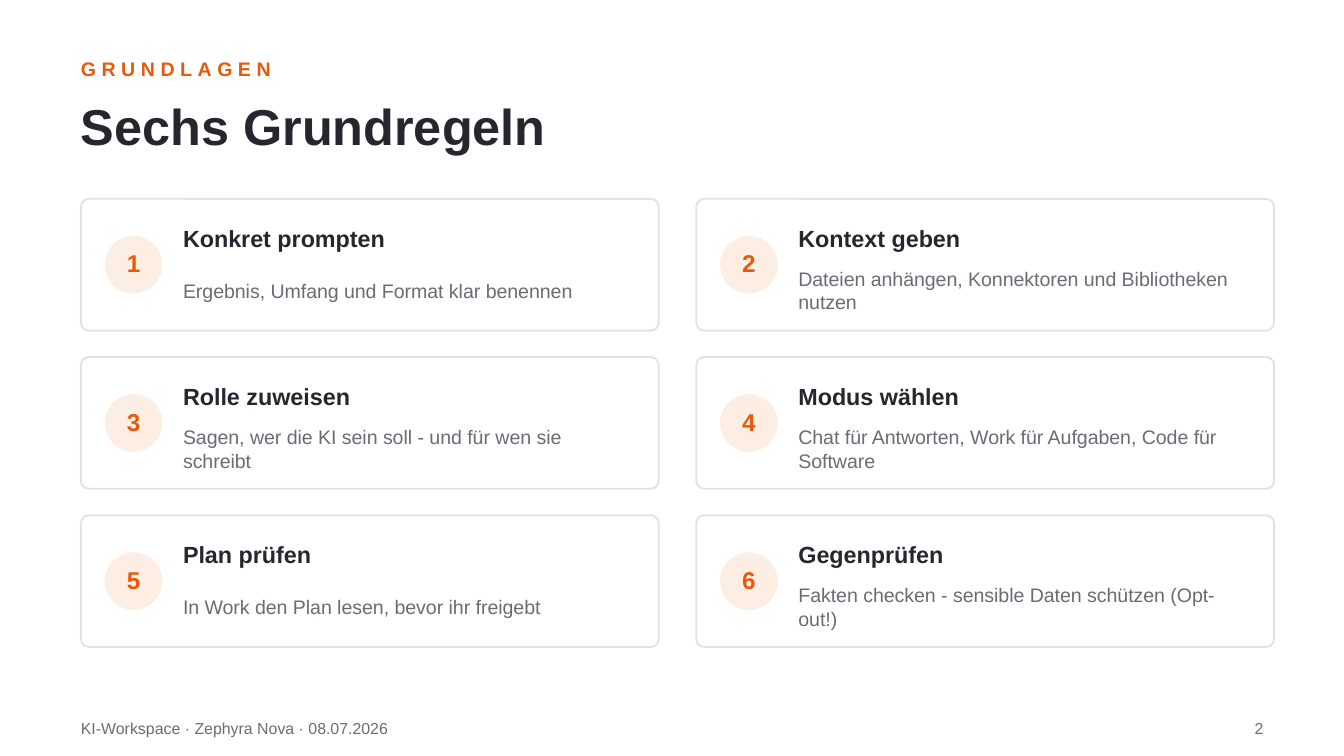
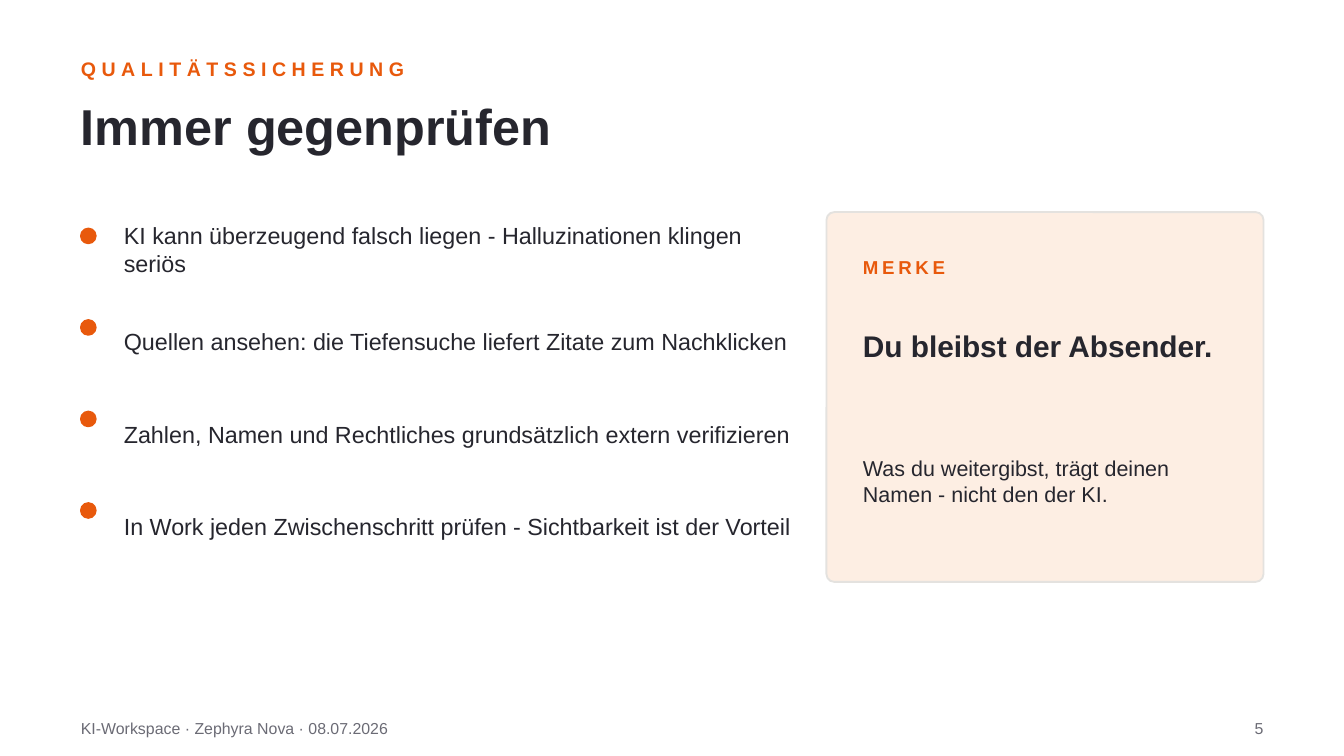
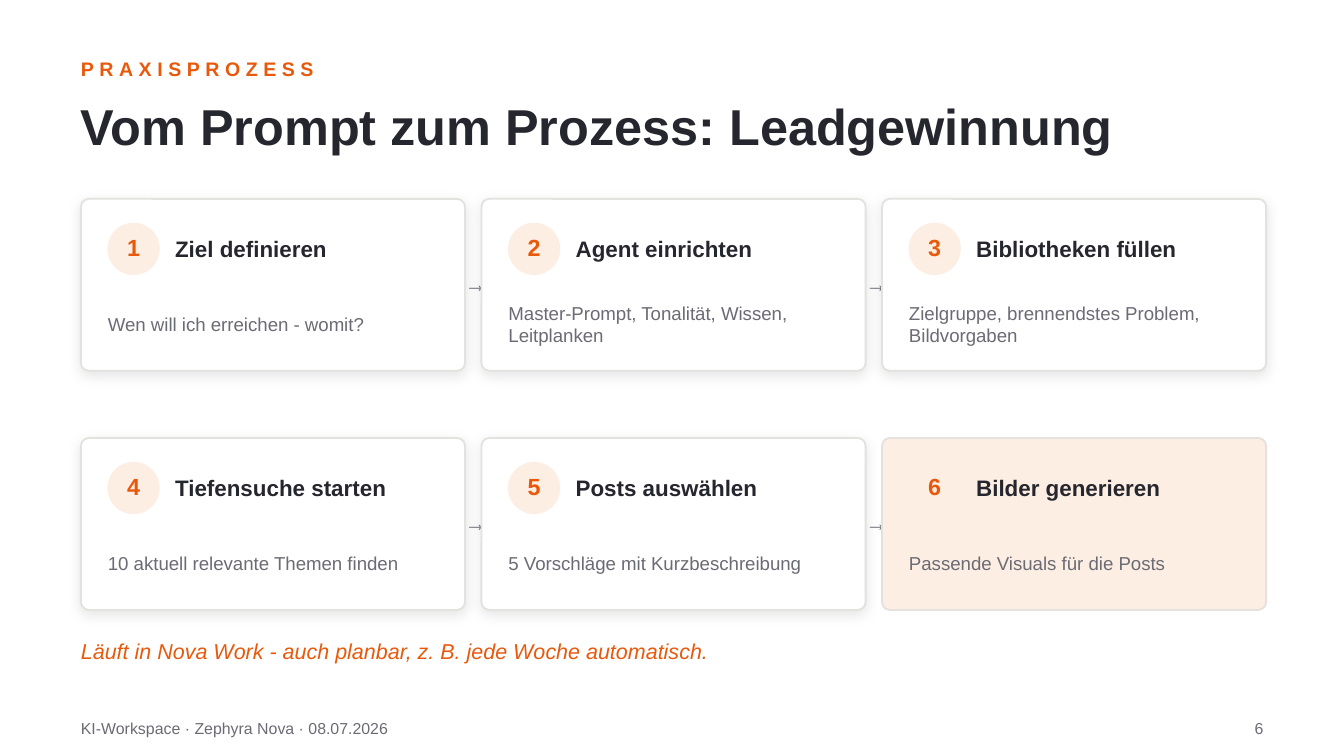
from lxml.etree import SubElement
from pptx import Presentation
from pptx.dml.color import RGBColor
from pptx.enum.shapes import MSO_SHAPE
from pptx.enum.text import MSO_ANCHOR, MSO_AUTO_SIZE, PP_ALIGN
from pptx.oxml.ns import qn
from pptx.util import Cm, Pt

FONT = "Arial"
ORANGE = "E8590C"
PEACH = "FDEEE3"
INK = "26262E"
GREY = "6B6B75"
BORDER = "E4E2DF"
WHITE = "FFFFFF"

MARGIN = 1.53
CONTENT_WIDTH = 22.35
GRID_TOP = 3.76
CORNER_RADIUS = 0.15
FOOTER = "KI-Workspace · Zephyra Nova · 08.07.2026"

RULES = [
    ("Konkret prompten", "Ergebnis, Umfang und Format klar benennen"),
    ("Kontext geben", "Dateien anhängen, Konnektoren und Bibliotheken nutzen"),
    ("Rolle zuweisen", "Sagen, wer die KI sein soll - und für wen sie schreibt"),
    ("Modus wählen", "Chat für Antworten, Work für Aufgaben, Code für Software"),
    ("Plan prüfen", "In Work den Plan lesen, bevor ihr freigebt"),
    ("Gegenprüfen", "Fakten checken - sensible Daten schützen (Opt-out!)"),
]
CHECKS = [
    ("KI kann überzeugend falsch liegen - Halluzinationen klingen seriös", 0),
    ("Quellen ansehen: die Tiefensuche liefert Zitate zum Nachklicken", 26.7),
    ("Zahlen, Namen und Rechtliches grundsätzlich extern verifizieren", 34.6),
    ("In Work jeden Zwischenschritt prüfen - Sichtbarkeit ist der Vorteil", 34.6),
]
STEPS = [
    ("Ziel definieren", "Wen will ich erreichen - womit?"),
    ("Agent einrichten", "Master-Prompt, Tonalität, Wissen, Leitplanken"),
    ("Bibliotheken füllen", "Zielgruppe, brennendstes Problem, Bildvorgaben"),
    ("Tiefensuche starten", "10 aktuell relevante Themen finden"),
    ("Posts auswählen", "5 Vorschläge mit Kurzbeschreibung"),
    ("Bilder generieren", "Passende Visuals für die Posts"),
]


def color(value):
    return RGBColor.from_string(value)


def place(box, left, top, width, height):
    box.left, box.top, box.width, box.height = Cm(left), Cm(top), Cm(width), Cm(height)


def prepare_frame(frame, anchor=MSO_ANCHOR.MIDDLE):
    frame.word_wrap = True
    frame.auto_size = MSO_AUTO_SIZE.NONE
    frame.vertical_anchor = anchor
    frame.margin_left = frame.margin_right = frame.margin_top = frame.margin_bottom = 0


def write(para, text, size=10.5, fill=INK, bold=False, italic=False,
          align=PP_ALIGN.LEFT, spacing=0, before=0):
    para.alignment = align
    para.space_before = Pt(before)
    span = para.add_run()
    span.text = text
    font = span.font
    font.name, font.size, font.bold, font.italic = FONT, Pt(size), bold, italic
    font.color.rgb = color(fill)
    if spacing:
        span._r.get_or_add_rPr().set("spc", str(spacing * 100))


def add_text(page, text, left, top, width, height, **style):
    box = page.shapes.add_textbox(Cm(left), Cm(top), Cm(width), Cm(height))
    prepare_frame(box.text_frame)
    write(box.text_frame.paragraphs[0], text, **style)


def add_figure(page, kind, left, top, width, height, fill, line, line_width):
    figure = page.shapes.add_shape(kind, Cm(left), Cm(top), Cm(width), Cm(height))
    figure.shadow.inherit = False
    figure.fill.solid()
    figure.fill.fore_color.rgb = color(fill)
    figure.line.color.rgb = color(line)
    figure.line.width = Pt(line_width)
    return figure


def add_card(page, left, top, width, height, fill=WHITE, shadow=False):
    card = add_figure(page, MSO_SHAPE.ROUNDED_RECTANGLE, left, top, width, height, fill, BORDER, 1)
    card.adjustments[0] = CORNER_RADIUS / height
    if shadow:
        effects = card._element.spPr.find(qn("a:effectLst"))
        outer = SubElement(effects, qn("a:outerShdw"), blurRad=str(Pt(7)), dist=str(Pt(2)),
                           dir="5400000", algn="bl", rotWithShape="0")
        shade = SubElement(outer, qn("a:srgbClr"), val="000000")
        SubElement(shade, qn("a:alpha"), val="10000")


def add_badge(page, number, left, top, diameter, size):
    badge = add_figure(page, MSO_SHAPE.OVAL, left, top, diameter, diameter, PEACH, PEACH, 0.5)
    prepare_frame(badge.text_frame)
    badge.text_frame.margin_bottom = Cm(0.06)
    write(badge.text_frame.paragraphs[0], str(number), size=size, fill=ORANGE, bold=True,
          align=PP_ALIGN.CENTER)


def remove_bullet(para):
    properties = para._p.get_or_add_pPr()
    properties.set("marL", "0")
    properties.set("indent", "0")
    SubElement(properties, qn("a:buNone"))


def add_checks(page):
    body = page.placeholders[1]
    place(body, 2.34, 4.19, 12.95, 6.5)
    frame = body.text_frame
    prepare_frame(frame, MSO_ANCHOR.TOP)
    for index, (text, before) in enumerate(CHECKS):
        para = frame.add_paragraph() if index else frame.paragraphs[0]
        remove_bullet(para)
        write(para, text, size=12.5, before=before)
        add_figure(page, MSO_SHAPE.OVAL, MARGIN, 4.32 + index * 1.73, 0.28, 0.28,
                   ORANGE, ORANGE, 1)


def add_page(deck, layout, kicker, title, number):
    page = deck.slides.add_slide(deck.slide_layouts.get_by_name(layout))
    heading = page.shapes.title
    place(heading, MARGIN, 1.59, CONTENT_WIDTH, 1.57)
    prepare_frame(heading.text_frame)
    write(heading.text_frame.paragraphs[0], title, size=27, bold=True)
    add_text(page, kicker, MARGIN, 0.97, CONTENT_WIDTH, 0.66, fill=ORANGE, bold=True, spacing=3)
    add_text(page, FOOTER, MARGIN, 13.46, 15.24, 0.61, size=8.5, fill=GREY)
    add_text(page, str(number), 22.35, 13.46, 1.53, 0.61, size=8.5, fill=GREY,
             align=PP_ALIGN.RIGHT)
    return page


def add_rules(page):
    for index, (name, detail) in enumerate(RULES):
        row, column = divmod(index, 2)
        left, top = MARGIN + column * 11.63, GRID_TOP + row * 2.99
        add_card(page, left, top, 10.92, 2.49)
        add_badge(page, index + 1, left + 0.46, top + 0.71, 1.07, 13)
        add_text(page, name, left + 1.93, top + 0.36, 8.51, 0.76, size=12.5, bold=True)
        add_text(page, detail, left + 1.93, top + 1.12, 8.51, 1.22, fill=GREY)


def add_reminder(page):
    left = 16.31
    add_card(page, 15.62, 4.01, 8.26, 6.99, fill=PEACH)
    add_text(page, "MERKE", left, 4.72, 6.86, 0.66, size=10, fill=ORANGE, bold=True, spacing=2)
    add_text(page, "Du bleibst der Absender.", left, 5.58, 6.99, 1.91, size=16, bold=True)
    add_text(page, "Was du weitergibst, trägt deinen Namen - nicht den der KI.",
             left, 7.7, 6.91, 2.79, size=11.5)


def add_steps(page):
    for index, (name, detail) in enumerate(STEPS):
        row, column = divmod(index, 3)
        left, top = MARGIN + column * 7.57, GRID_TOP + row * 4.52
        is_last = index == len(STEPS) - 1
        add_card(page, left, top, 7.26, 3.25, fill=PEACH if is_last else WHITE,
                 shadow=not is_last)
        add_badge(page, index + 1, left + 0.51, top + 0.46, 0.97, 12.5)
        add_text(page, name, left + 1.78, top + 0.41, 4.98, 1.07, size=12, bold=True)
        add_text(page, detail, left + 0.51, top + 1.67, 6.25, 1.4, size=10, fill=GREY)
        if column < 2:
            add_text(page, "→", left + 7.21, top + 1.14, 0.51, 0.91, size=12, fill=GREY,
                     align=PP_ALIGN.CENTER)


def main():
    deck = Presentation()
    deck.slide_width, deck.slide_height = Cm(25.4), Cm(14.29)

    add_rules(add_page(deck, "Title Only", "GRUNDLAGEN", "Sechs Grundregeln", 2))

    page = add_page(deck, "Title and Content", "QUALITÄTSSICHERUNG", "Immer gegenprüfen", 5)
    add_checks(page)
    add_reminder(page)

    page = add_page(deck, "Title Only", "PRAXISPROZESS", "Vom Prompt zum Prozess: Leadgewinnung", 6)
    add_steps(page)
    add_text(page, "Läuft in Nova Work - auch planbar, z. B. jede Woche automatisch.",
             MARGIN, 11.89, CONTENT_WIDTH, 0.81, size=11.5, fill=ORANGE, italic=True)

    deck.save("out.pptx")


if __name__ == "__main__":
    main()
